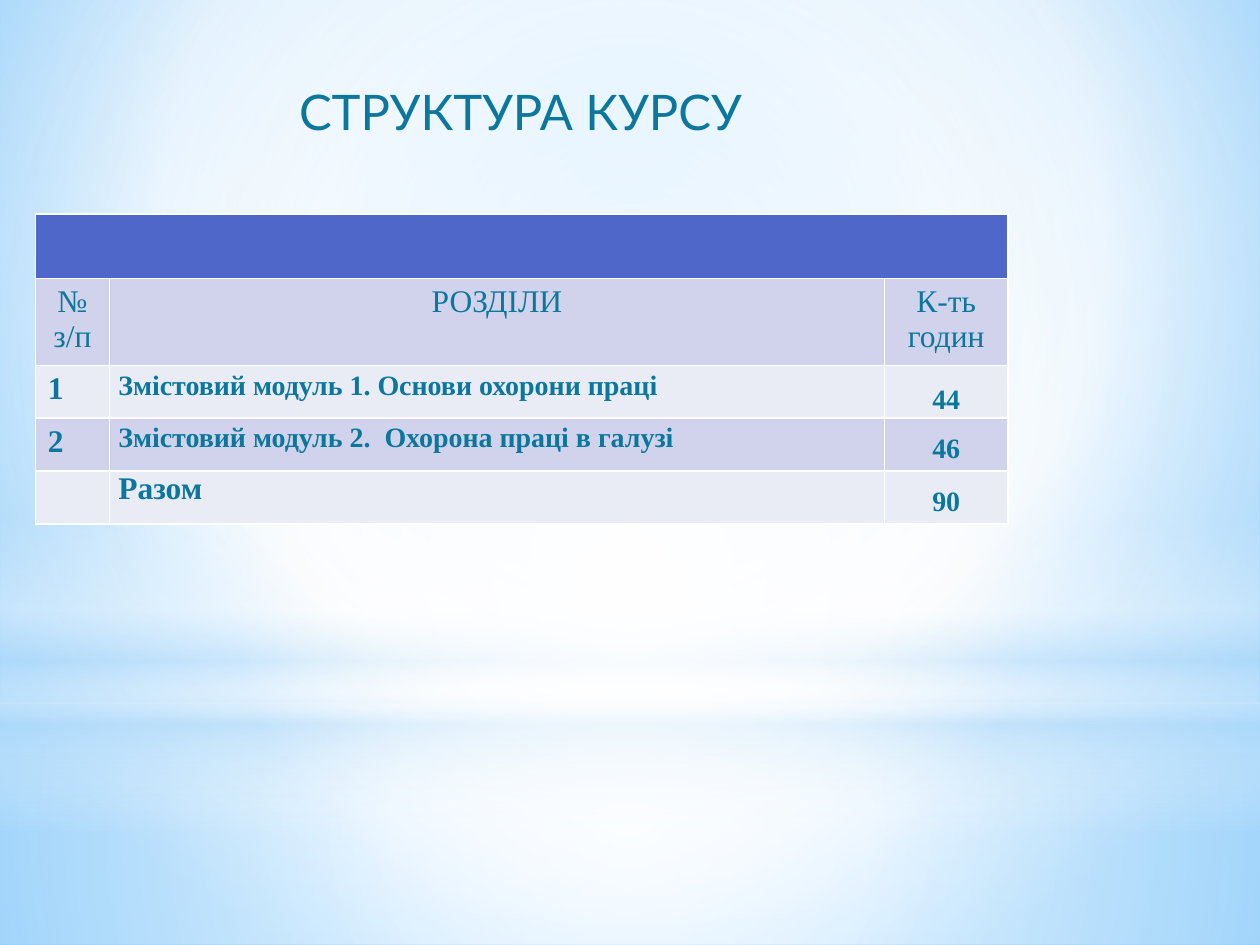
import dataclasses

import lxml.etree
import pptx
import pptx.dml.color
import pptx.enum.shapes
import pptx.enum.text
import pptx.oxml.ns
import pptx.util

SHAPE = pptx.enum.shapes.MSO_SHAPE
ALIGN = pptx.enum.text.PP_ALIGN
ANCHOR = pptx.enum.text.MSO_ANCHOR

# The slide is a grid of 100 columns by 75 rows of square units.
COLS, ROWS = 100, 75
UNIT = pptx.util.Inches(0.1)


@dataclasses.dataclass(frozen=True)
class Theme:
    text: str = "0C779D"
    header: str = "4E67C8"
    bands: tuple = ("D0D3EB", "E9EBF5")
    white: str = "FFFFFF"
    haze: str = "B4DCFA"
    sky: str = "9ED5FF"
    deep_sky: str = "5BB9FF"
    title_font: str = "Lato"
    table_font: str = "Times New Roman"
    title_size: int = 28
    large: int = 18
    small: int = 16


THEME = Theme()
CENTER = (50, 50, 50, 50)


def units(*values):
    return [round(v * UNIT) for v in values]


def rgb(value):
    return pptx.dml.color.RGBColor.from_string(value)


def add_node(parent, tag, **attributes):
    node = lxml.etree.SubElement(parent, pptx.oxml.ns.qn(tag))
    for name, value in attributes.items():
        node.set(name, str(value))
    return node


def paint_gradient(owner, stops, focus=None):
    """Fill with (position, colour, opacity) stops: round a focus, or downwards."""
    owner.fill.solid()
    solid = owner.element.xpath(".//a:solidFill")[0]
    grad = lxml.etree.Element(pptx.oxml.ns.qn("a:gradFill"), rotWithShape="1")
    stop_list = add_node(grad, "a:gsLst")
    for position, color, opacity in stops:
        stop = add_node(stop_list, "a:gs", pos=position * 1000)
        clr = add_node(stop, "a:srgbClr", val=color)
        if opacity < 100:
            add_node(clr, "a:alpha", val=opacity * 1000)
    if focus:
        circle = add_node(grad, "a:path", path="circle")
        sides = {side: share * 1000 for side, share in zip("ltrb", focus)}
        add_node(circle, "a:fillToRect", **sides)
    else:
        add_node(grad, "a:lin", ang=90 * 60000, scaled=0)
    solid.getparent().replace(solid, grad)


@dataclasses.dataclass
class Backdrop:
    """The slide's background seen as something with a fill and an element."""
    fill: object
    element: object


def add_glow(s, kind, top, height, stops, focus=None):
    sp = s.shapes.add_shape(kind, *units(0, top, COLS, height))
    sp.shadow.inherit = False
    sp.line.fill.background()
    paint_gradient(sp, stops, focus)


def add_background(s):
    t = THEME
    paint_gradient(Backdrop(s.background.fill, s.element),
                   [(0, t.sky, 100), (60, t.white, 100), (100, t.deep_sky, 100)],
                   (20, 10, 20, 60))
    horizon = 55.8
    add_glow(s, SHAPE.RECTANGLE, horizon, ROWS - horizon,
             [(0, t.white, 91), (37, t.white, 76), (100, t.haze, 79)], CENTER)
    add_glow(s, SHAPE.RECTANGLE, 0, horizon,
             [(0, t.white, 89), (48, t.white, 62), (100, t.haze, 79)], CENTER)
    add_glow(s, SHAPE.RECTANGLE, 41.2, 25,
             [(0, t.white, 0), (29, t.white, 30), (45, t.haze, 40),
              (55, t.white, 26), (65, t.haze, 60), (100, t.white, 0)])
    add_glow(s, SHAPE.OVAL, 17.5, horizon,
             [(0, t.white, 100), (56, t.white, 0)], CENTER)


def write(tf, text, font, size, bold=False, **paragraph_format):
    p = tf.paragraphs[0]
    for name, value in paragraph_format.items():
        setattr(p, name, value)
    r = p.add_run()
    r.text = text
    for name, value in dict(name=font, size=pptx.util.Pt(size), bold=bold).items():
        setattr(r.font, name, value)
    r.font.color.rgb = rgb(THEME.text)


def add_title(s, text):
    tf = s.shapes.add_textbox(*units(16.3, 6, 50, 5.7)).text_frame
    tf.word_wrap = True
    tf.auto_size = pptx.enum.text.MSO_AUTO_SIZE.SHAPE_TO_FIT_TEXT
    write(tf, text, THEME.title_font, THEME.title_size, alignment=ALIGN.CENTER)


def fill_cell(cell, text, size, tight=False, anchor=None, **text_format):
    if tight:
        side, edge = units(0.7, 0)
        margins = dict(margin_left=side, margin_right=side,
                       margin_top=edge, margin_bottom=edge)
        for name, value in margins.items():
            setattr(cell, name, value)
    if anchor is not None:
        cell.vertical_anchor = anchor
    write(cell.text_frame, text, THEME.table_font, size, **text_format)


def add_course_table(s, headings, modules, total):
    widths, heights = (5.9, 61.5, 9.8), (5.1, 6.9, 4.2, 4.2, 4.2)
    table = s.shapes.add_table(
        len(heights), len(widths),
        *units(2.8, 17, sum(widths), sum(heights))).table
    for column, width in zip(table.columns, units(*widths)):
        column.width = width
    for row, height in zip(table.rows, units(*heights)):
        row.height = height
    for i, row in enumerate(table.rows):
        for cell in row.cells:
            cell.fill.solid()
            cell.fill.fore_color.rgb = rgb(THEME.bands[(i - 1) % 2] if i else THEME.header)
    table.cell(0, 0).merge(table.cell(0, len(widths) - 1))

    for j, heading in enumerate(headings):
        fill_cell(table.cell(1, j), heading, THEME.large, alignment=ALIGN.CENTER)

    after = pptx.util.Pt(10)
    name_format = dict(tight=True, bold=True, alignment=ALIGN.JUSTIFY,
                       line_spacing=1.15, space_after=after)
    hours_format = dict(tight=True, bold=True, alignment=ALIGN.CENTER, line_spacing=1.5)
    first_hours = dict(anchor=ANCHOR.MIDDLE, space_after=after)
    for number, (name, hours) in enumerate(modules, 1):
        i = number + 1
        fill_cell(table.cell(i, 0), str(number), THEME.large, bold=True)
        fill_cell(table.cell(i, 1), name, THEME.small, **name_format)
        extra = first_hours if number == 1 else {}
        fill_cell(table.cell(i, 2), str(hours), THEME.small, **hours_format, **extra)

    last = len(heights) - 1
    fill_cell(table.cell(last, 1), total, THEME.large, tight=True, bold=True)
    fill_cell(table.cell(last, 2), str(sum(hours for _, hours in modules)),
              THEME.small, **hours_format)


def main():
    prs = pptx.Presentation()
    prs.slide_width, prs.slide_height = units(COLS, ROWS)
    s = prs.slides.add_slide(prs.slide_layouts[6])
    add_background(s)
    add_course_table(
        s,
        ("№ з/п", "РОЗДІЛИ", "К-ть годин"),
        (("Змістовий модуль 1. Основи охорони праці", 44),
         ("Змістовий модуль 2.  Охорона праці в галузі", 46)),
        "Разом")
    add_title(s, "СТРУКТУРА КУРСУ")
    prs.save("out.pptx")


if __name__ == "__main__":
    main()
